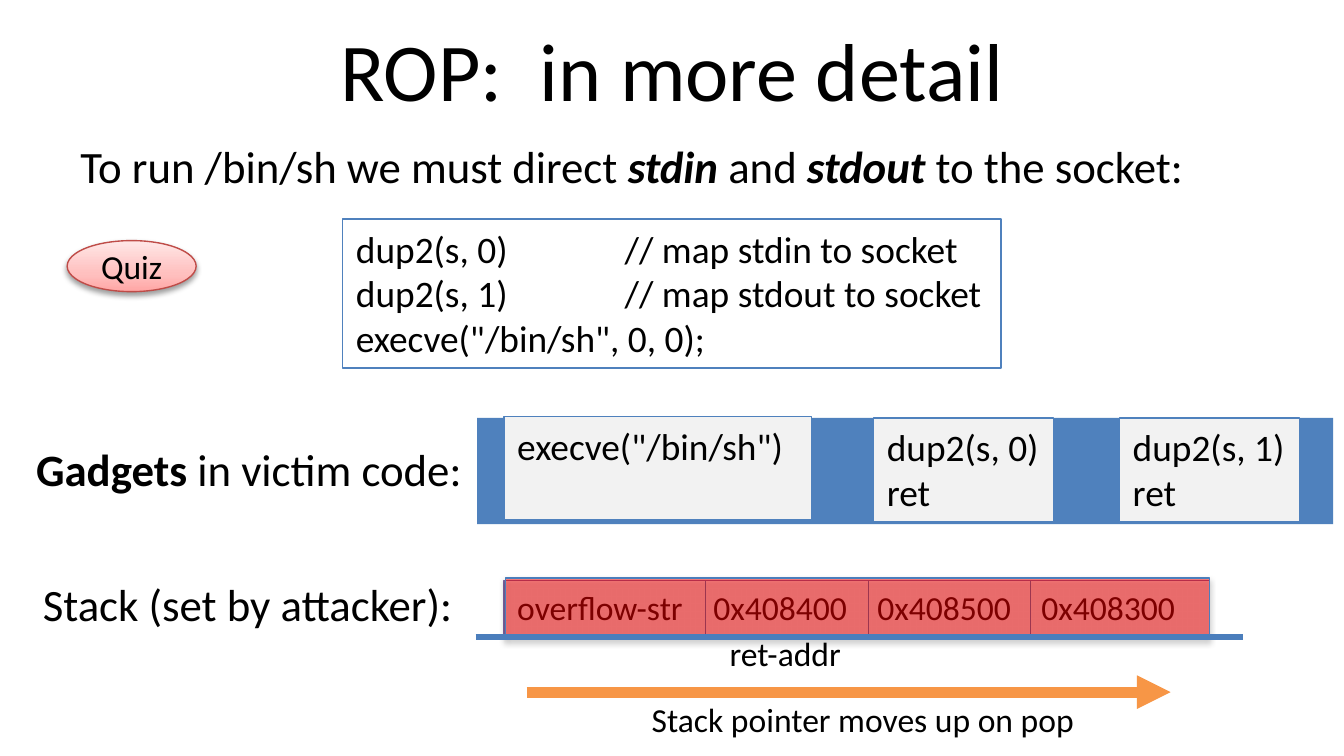
import dataclasses
import typing

import pptx
import pptx.dml.color
import pptx.enum.shapes
import pptx.enum.text
import pptx.oxml
import pptx.oxml.ns
import pptx.util

Inches = pptx.util.Inches
Pt = pptx.util.Pt
RGBColor = pptx.dml.color.RGBColor
MSO_SHAPE = pptx.enum.shapes.MSO_SHAPE
PP_ALIGN = pptx.enum.text.PP_ALIGN
MSO_ANCHOR = pptx.enum.text.MSO_ANCHOR

BLACK = RGBColor(0x00, 0x00, 0x00)
BLUE = RGBColor(0x4F, 0x81, 0xBD)
LINE_BLUE = RGBColor(0x4B, 0x7E, 0xBC)
PALE_GREY = RGBColor(0xF2, 0xF2, 0xF2)
PURPLE = RGBColor(0x80, 0x64, 0xA2)
ORANGE = RGBColor(0xF7, 0x96, 0x46)
RED = RGBColor(0xFF, 0x00, 0x00)
QUIZ_RED = RGBColor(0xBF, 0x4C, 0x48)
QUIZ_STOPS = (
    (0, RGBColor(0xFF, 0xA6, 0xA5)),
    (35, RGBColor(0xFF, 0xC0, 0xBF)),
    (100, RGBColor(0xFF, 0xE7, 0xE7)),
)
FONT = "Calibri"
DRAWING_NS = pptx.oxml.ns.nsdecls("a")


@dataclasses.dataclass(frozen=True)
class Box:
    left: float
    top: float
    width: float
    height: float

    def lengths(self) -> list:
        return [Inches(v) for v in dataclasses.astuple(self)]


@dataclasses.dataclass(frozen=True)
class Span:
    text: str
    bold: bool = False
    italic: bool = False


@dataclasses.dataclass(frozen=True)
class Gadget:
    box: Box
    code: str
    wrap: bool = False


def write(shape, text: typing.Union[str, list], *, size: float, wrap: bool = False,
          align=PP_ALIGN.LEFT, anchor=MSO_ANCHOR.TOP, tabs: tuple = ()) -> None:
    """Fill a shape with a string (one paragraph a line) or a list of spans."""
    lines = [[Span(line)] for line in text.split("\n")] if isinstance(text, str) else [text]
    frame = shape.text_frame
    frame.word_wrap = wrap
    frame.vertical_anchor = anchor
    for number, spans in enumerate(lines):
        paragraph = frame.add_paragraph() if number else frame.paragraphs[0]
        paragraph.alignment = align
        if tabs:
            stops = "".join(f'<a:tab pos="{Inches(t)}" algn="l"/>' for t in tabs)
            paragraph._p.get_or_add_pPr().append(
                pptx.oxml.parse_xml(f"<a:tabLst {DRAWING_NS}>{stops}</a:tabLst>"))
        for span in spans:
            run = paragraph.add_run()
            run.text = span.text
            run.font.name = FONT
            run.font.size = Pt(size)
            run.font.color.rgb = BLACK
            run.font.bold = span.bold
            run.font.italic = span.italic


def add_label(slide, box: Box, text: typing.Union[str, list], **text_format) -> None:
    write(slide.shapes.add_textbox(*box.lengths()), text, **text_format)


def add_block(slide, box: Box, *, fill: typing.Optional[RGBColor] = None,
              line: typing.Optional[RGBColor] = None, kind=MSO_SHAPE.RECTANGLE):
    block = slide.shapes.add_shape(kind, *box.lengths())
    block.shadow.inherit = False
    if fill is None:
        block.fill.background()
    else:
        block.fill.solid()
        block.fill.fore_color.rgb = fill
    if line is None:
        block.line.fill.background()
    else:
        block.line.color.rgb = line
        block.line.width = Pt(0.75)
    return block


def add_line(slide, start: tuple, end: tuple, color: RGBColor, width: float,
             arrow: bool = False) -> None:
    points = [Inches(v) for v in (*start, *end)]
    line = slide.shapes.add_connector(pptx.enum.shapes.MSO_CONNECTOR.STRAIGHT, *points)
    line.line.color.rgb = color
    line.line.width = Pt(width)
    if arrow:
        line.line._get_or_add_ln().append(
            pptx.oxml.parse_xml(f'<a:tailEnd {DRAWING_NS} type="triangle"/>'))
    line._element.spPr.append(pptx.oxml.parse_xml(f"<a:effectLst {DRAWING_NS}/>"))


def cast_shadow(shape, opacity: int, distance: float) -> None:
    effects = shape._element.spPr.find(pptx.oxml.ns.qn("a:effectLst"))
    effects.append(pptx.oxml.parse_xml(
        f'<a:outerShdw {DRAWING_NS} blurRad="{Pt(3.1)}" dist="{Pt(distance)}" '
        f'dir="5400000" rotWithShape="0"><a:srgbClr val="000000">'
        f'<a:alpha val="{opacity * 1000}"/></a:srgbClr></a:outerShdw>'))


def set_opacity(shape, percent: int) -> None:
    color = shape._element.spPr.find(
        f"{pptx.oxml.ns.qn('a:solidFill')}/{pptx.oxml.ns.qn('a:srgbClr')}")
    color.append(pptx.oxml.parse_xml(f'<a:alpha {DRAWING_NS} val="{percent * 1000}"/>'))


def set_upward_gradient(shape, stops: tuple) -> None:
    shape.fill.gradient()
    gradient = shape._element.spPr.find(pptx.oxml.ns.qn("a:gradFill"))
    for child in list(gradient):
        gradient.remove(child)
    marks = "".join(f'<a:gs pos="{at * 1000}"><a:srgbClr val="{color}"/></a:gs>'
                    for at, color in stops)
    gradient.append(pptx.oxml.parse_xml(f"<a:gsLst {DRAWING_NS}>{marks}</a:gsLst>"))
    gradient.append(pptx.oxml.parse_xml(
        f'<a:lin {DRAWING_NS} ang="16200000" scaled="0"/>'))


def main() -> None:
    deck = pptx.Presentation()
    deck.slide_width = Inches(10)
    deck.slide_height = Inches(10 * 9 / 16)
    slide = deck.slides.add_slide(deck.slide_layouts[6])

    # Title and introduction
    add_label(slide, Box(0.5, 0.04, 9, 0.94), "ROP:  in more detail", size=44,
              wrap=True, align=PP_ALIGN.CENTER, anchor=MSO_ANCHOR.MIDDLE)
    add_label(slide, Box(0.5, 0.98, 9, 0.5), [
        Span("To run /bin/sh we must direct "), Span("stdin", True, True),
        Span(" and "), Span("stdout", True, True), Span(" to the socket:"),
    ], size=24, wrap=True)

    # Code to be run
    code = add_block(slide, Box(2.55, 1.63, 4.9, 1.11), line=BLUE)
    write(code, "dup2(s, 0)\t// map stdin to socket\n"
                "dup2(s, 1)\t// map stdout to socket\n"
                'execve("/bin/sh", 0, 0);', size=20, tabs=(2,))

    # Gadgets in the victim code
    add_block(slide, Box(3.55, 3.11, 6.37, 0.79), fill=BLUE)
    add_label(slide, Box(0.17, 3.24, 3.38, 0.5),
              [Span("Gadgets", True), Span(" in victim code:")], size=24)
    for gadget in (
        Gadget(Box(8.33, 3.11, 1.34, 0.77), "dup2(s, 1)\nret"),
        Gadget(Box(6.5, 3.11, 1.34, 0.77), "dup2(s, 0)\nret"),
        Gadget(Box(3.75, 3.1, 2.29, 0.77), 'execve("/bin/sh")', wrap=True),
    ):
        block = add_block(slide, gadget.box, fill=PALE_GREY, line=BLUE)
        write(block, gadget.code, size=20, wrap=gadget.wrap)

    # Stack contents
    add_label(slide, Box(0.22, 4.24, 3.28, 0.5), "Stack (set by attacker):", size=24)
    stack = add_block(slide, Box(3.75, 4.32, 5.25, 0.4), line=PURPLE)
    cell_width = 1.21
    write(stack, "overflow-str\t0x408400\t0x408500\t0x408300", size=18, wrap=True,
          tabs=tuple(1.46 + 1.22 * i for i in range(3)))
    for i in range(3):
        x = 5.25 + cell_width * i
        add_line(slide, (x, 4.32), (x, 4.72), LINE_BLUE, 0.75)

    # Stack pointer direction
    add_line(slide, (3.92, 5.15), (8.71, 5.15), ORANGE, 6, arrow=True)
    add_label(slide, Box(4.75, 5.15, 3.38, 0.4), "Stack pointer moves up on pop", size=18)
    add_label(slide, Box(5.33, 4.66, 1.04, 0.4), "ret-addr", size=18)

    # Overwritten area and stack base
    overwritten = add_block(slide, Box(3.76, 4.3, 5.24, 0.45), fill=RED, line=LINE_BLUE)
    set_opacity(overwritten, 49)
    cast_shadow(overwritten, 35, 1.8)
    add_line(slide, (3.54, 4.74), (9.25, 4.74), LINE_BLUE, 3)

    # Quiz badge
    quiz = add_block(slide, Box(0.5, 1.79, 0.96, 0.38), line=QUIZ_RED, kind=MSO_SHAPE.OVAL)
    set_upward_gradient(quiz, QUIZ_STOPS)
    cast_shadow(quiz, 38, 1.6)
    write(quiz, "Quiz", size=18, align=PP_ALIGN.CENTER, anchor=MSO_ANCHOR.MIDDLE)

    deck.save("out.pptx")


if __name__ == "__main__":
    main()
